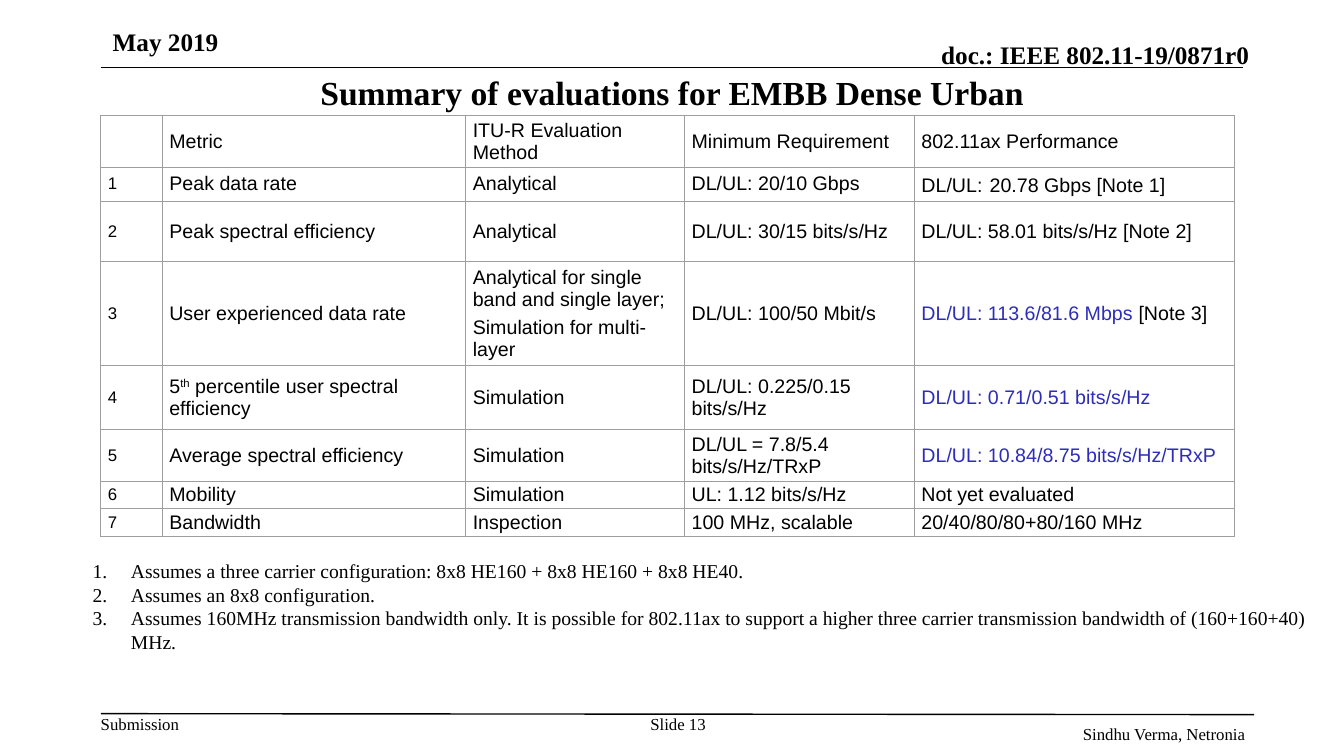
from dataclasses import dataclass

from lxml import etree
from pptx import Presentation
from pptx.dml.color import RGBColor
from pptx.enum.shapes import MSO_CONNECTOR
from pptx.enum.text import MSO_ANCHOR, MSO_AUTO_SIZE, PP_ALIGN
from pptx.oxml.ns import qn
from pptx.util import Inches, Pt

TOP, MIDDLE, BOTTOM = MSO_ANCHOR.TOP, MSO_ANCHOR.MIDDLE, MSO_ANCHOR.BOTTOM
LEFT, CENTER, RIGHT = PP_ALIGN.LEFT, PP_ALIGN.CENTER, PP_ALIGN.RIGHT
STRAIGHT = MSO_CONNECTOR.STRAIGHT
FIT_SHAPE = MSO_AUTO_SIZE.SHAPE_TO_FIT_TEXT
SLIDE_W, SLIDE_H = Inches(13.33), Inches(7.5)


@dataclass(frozen=True)
class Theme:
    serif: str = "Times New Roman"
    sans: str = "Arial"
    ink: str = "000000"
    result: str = "2D2DB9"
    border: str = "9E9E9E"
    title: int = 24
    header: int = 18
    body: int = 14
    small: int = 12
    rule: float = 1
    grid: float = 0.75


THEME = Theme()


@dataclass(frozen=True)
class Label:
    """A line of text; its box is in percent of the slide, its inset in inches."""
    text: str
    box: tuple[float, float, float, float]
    size: int
    bold: bool = False
    align: PP_ALIGN = LEFT
    anchor: MSO_ANCHOR = TOP
    inset: tuple[float, float] = (0, 0)


@dataclass(frozen=True)
class Rule:
    start: tuple[float, float]
    end: tuple[float, float]


@dataclass(frozen=True)
class Run:
    text: str
    color: str = THEME.ink
    size: int = THEME.body
    raised: bool = False


@dataclass(frozen=True)
class Row:
    """A table row; each cell holds paragraphs, each paragraph holds runs."""
    height: float
    cells: tuple
    gap: int = 2


def cell_text(*lines: str, color: str = THEME.ink) -> list[list[Run]]:
    return [[Run(line, color)] for line in lines]


LABELS = [
    Label("Submission", (7.5, 94.4, 5.93, 2.67), THEME.small),
    Label("doc.: IEEE 802.11-19/0871r0", (54.69, 5.2, 38.26, 4), THEME.header, True, RIGHT, BOTTOM),
    Label("Summary of evaluations for EMBB Dense Urban", (7.5, 7.73, 85, 8.93),
          THEME.title, True, CENTER, MIDDLE, (0.1, 0.05)),
    Label("Slide 13", (47.56, 94.4, 5.78, 5.33), THEME.small, align=CENTER),
    Label("May 2019", (7.65, 4.8, 20.48, 4), THEME.header, True, LEFT, BOTTOM, (0.1, 0.1)),
    Label("Sindhu Verma, Netronia", (58.59, 94.4, 34.81, 2.67), THEME.small,
          align=RIGHT, inset=(0.1, 0.1)),
]
RULES = [Rule((7.5, 8.93), (92.5, 8.93)), Rule((7.5, 94.4), (93.32, 94.53))]

TABLE_AT = (7.5, 15.33)
COLUMNS = (4.58, 22.58, 16.28, 17.1, 23.78)
ROWS = [
    Row(6.27, (cell_text("Metric"), cell_text("ITU-R Evaluation Method"),
               cell_text("Minimum Requirement"), cell_text("802.11ax Performance")), 4),
    Row(4.13, (cell_text("Peak data rate"), cell_text("Analytical"), cell_text("DL/UL: 20/10 Gbps"),
               [[Run("DL/UL:"), Run(" ", size=THEME.header), Run("20.78 Gbps [Note 1]")]])),
    Row(8, (cell_text("Peak spectral efficiency"), cell_text("Analytical"),
            cell_text("DL/UL: 30/15 bits/s/Hz"), cell_text("DL/UL: 58.01 bits/s/Hz [Note 2]"))),
    Row(12.67, (cell_text("User experienced data rate"),
                cell_text("Analytical for single band and single layer;",
                          "Simulation for multi-layer"),
                cell_text("DL/UL: 100/50 Mbit/s"),
                [[Run("DL/UL: 113.6/81.6 Mbps ", THEME.result), Run("[Note 3]")]])),
    Row(8.53, ([[Run("5"), Run("th", raised=True), Run(" percentile user spectral efficiency")]],
               cell_text("Simulation"), cell_text("DL/UL: 0.225/0.15 bits/s/Hz"),
               cell_text("DL/UL: 0.71/0.51 bits/s/Hz", color=THEME.result))),
    Row(6.27, (cell_text("Average spectral efficiency"), cell_text("Simulation"),
               cell_text("DL/UL = 7.8/5.4 bits/s/Hz/TRxP"),
               cell_text("DL/UL: 10.84/8.75 bits/s/Hz/TRxP", color=THEME.result))),
    Row(3.33, (cell_text("Mobility"), cell_text("Simulation"), cell_text("UL: 1.12 bits/s/Hz"),
               cell_text("Not yet evaluated"))),
    Row(3.33, (cell_text("Bandwidth"), cell_text("Inspection"), cell_text("100 MHz, scalable"),
               cell_text("20/40/80/80+80/160 MHz"))),
]

NOTES_BOX = (6.15, 73.2, 92.5, 13.87)
NOTES = [
    "Assumes a three carrier configuration: 8x8 HE160 + 8x8 HE160 + 8x8 HE40.",
    "Assumes an 8x8 configuration.",
    "Assumes 160MHz transmission bandwidth only. It is possible for 802.11ax to support a higher "
    "three carrier transmission bandwidth of (160+160+40) MHz.",
]


def across(share: float) -> int:
    return round(SLIDE_W * share / 100)


def down(share: float) -> int:
    return round(SLIDE_H * share / 100)


def style(r, font: str, size: int, color: str = THEME.ink, bold: bool = False) -> None:
    r.font.name, r.font.size, r.font.bold = font, Pt(size), bold
    r.font.color.rgb = RGBColor.from_string(color)


def add_frame(s, box: tuple[float, float, float, float]):
    x, y, w, h = box
    tf = s.shapes.add_textbox(across(x), down(y), across(w), down(h)).text_frame
    tf.word_wrap = True
    return tf


def add_label(s, label: Label) -> None:
    tf = add_frame(s, label.box)
    tf.text = label.text
    tf.vertical_anchor = label.anchor
    tf.margin_left = tf.margin_right = Inches(label.inset[0])
    tf.margin_top = tf.margin_bottom = Inches(label.inset[1])
    p = tf.paragraphs[0]
    p.alignment = label.align
    style(p.runs[0], THEME.serif, label.size, bold=label.bold)


def add_rule(s, rule: Rule) -> None:
    (x1, y1), (x2, y2) = rule.start, rule.end
    line = s.shapes.add_connector(STRAIGHT, across(x1), down(y1), across(x2), down(y2))
    line.line.color.rgb = RGBColor.from_string(THEME.ink)
    line.line.width = Pt(THEME.rule)
    etree.SubElement(line._element.spPr, qn("a:effectLst"))


def add_borders(cell) -> None:
    tcPr = cell._tc.get_or_add_tcPr()
    for i, side in enumerate(("a:lnL", "a:lnR", "a:lnT", "a:lnB")):
        ln = etree.Element(qn(side), w=str(Pt(THEME.grid)))
        fill = etree.SubElement(ln, qn("a:solidFill"))
        etree.SubElement(fill, qn("a:srgbClr"), val=THEME.border)
        tcPr.insert(i, ln)


def fill_cell(cell, paragraphs: list[list[Run]], gap: int) -> None:
    cell.fill.background()
    add_borders(cell)
    cell.vertical_anchor = MIDDLE
    cell.margin_left = cell.margin_right = Inches(0.07)
    cell.margin_top = cell.margin_bottom = Inches(0.02)
    tf = cell.text_frame
    for i, runs in enumerate(paragraphs):
        p = tf.add_paragraph() if i else tf.paragraphs[0]
        p.space_before = p.space_after = Pt(gap)
        for run in runs:
            r = p.add_run()
            r.text = run.text
            style(r, THEME.sans, run.size, run.color)
            if run.raised:
                r._r.get_or_add_rPr().set("baseline", "30000")


def add_metrics(s) -> None:
    x, y = TABLE_AT
    height = sum(row.height for row in ROWS)
    table = s.shapes.add_table(len(ROWS), len(COLUMNS), across(x), down(y),
                               across(sum(COLUMNS)), down(height)).table
    table.first_row = table.horz_banding = False
    for column, width in zip(table.columns, COLUMNS):
        column.width = across(width)
    for i, row in enumerate(ROWS):
        table.rows[i].height = down(row.height)
        number = [[Run(str(i), size=THEME.small)]] if i else []
        for j, paragraphs in enumerate((number, *row.cells)):
            fill_cell(table.cell(i, j), paragraphs, row.gap)


def add_notes(s) -> None:
    tf = add_frame(s, NOTES_BOX)
    tf.auto_size = FIT_SHAPE
    tf.text = "\n".join(NOTES)
    for p in tf.paragraphs:
        p.line_spacing = Pt(17)
        pPr = p._p.get_or_add_pPr()
        pPr.set("marL", str(Inches(0.38)))
        pPr.set("indent", str(Inches(-0.38)))
        etree.SubElement(pPr, qn("a:buAutoNum"), type="arabicPeriod")
        style(p.runs[0], THEME.serif, THEME.body)


def main() -> None:
    prs = Presentation()
    prs.slide_width, prs.slide_height = SLIDE_W, SLIDE_H
    s = prs.slides.add_slide(prs.slide_layouts[6])
    for rule in RULES:
        add_rule(s, rule)
    for label in LABELS:
        add_label(s, label)
    add_metrics(s)
    add_notes(s)
    prs.save("out.pptx")


if __name__ == "__main__":
    main()
